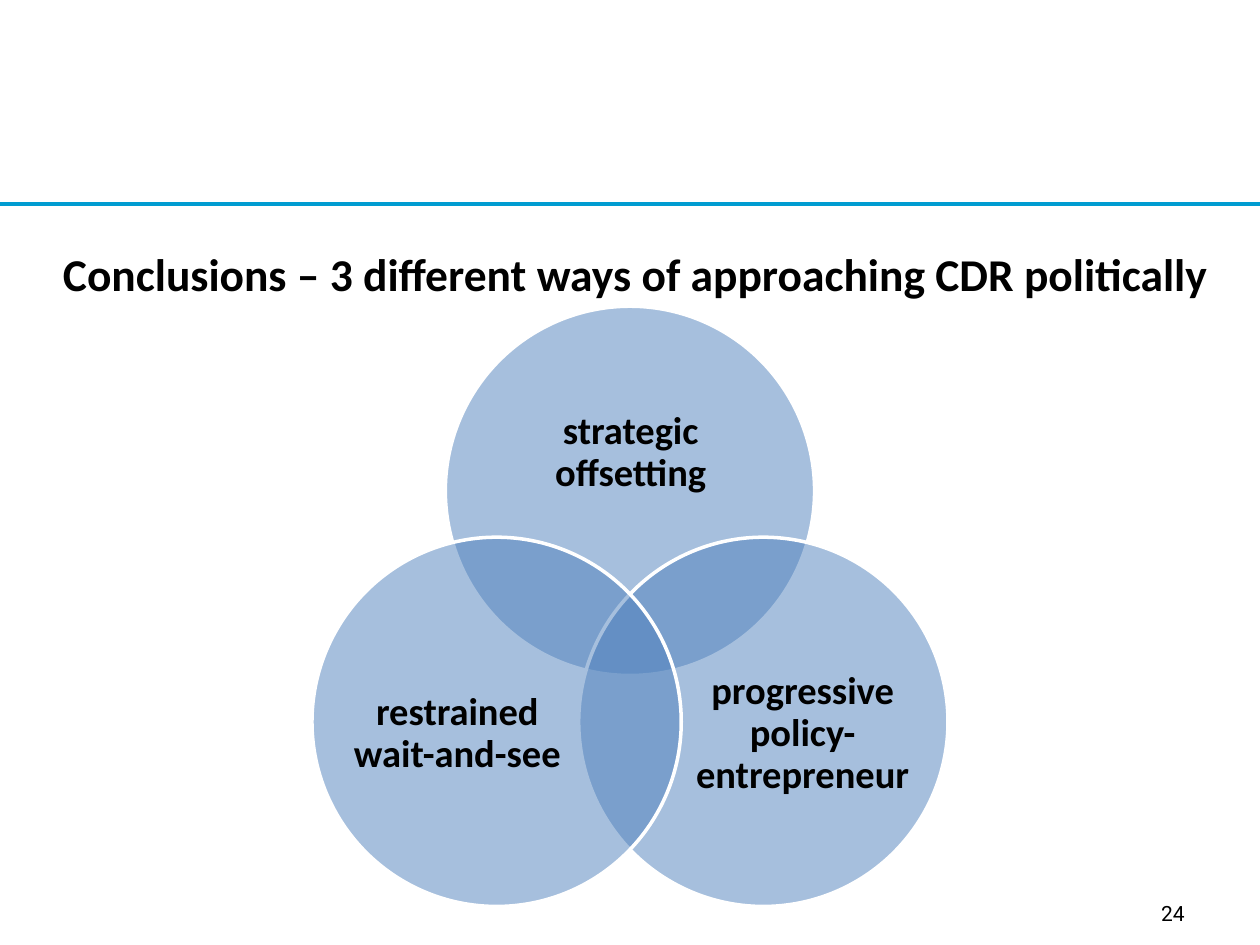
from math import cos, radians, sin

from lxml import etree
from pptx import Presentation
from pptx.dml.color import RGBColor
from pptx.enum.shapes import MSO_CONNECTOR, MSO_SHAPE
from pptx.enum.text import MSO_ANCHOR, PP_ALIGN
from pptx.oxml.ns import qn
from pptx.util import Pt

LEFT, MID, RIGHT = PP_ALIGN.LEFT, PP_ALIGN.CENTER, PP_ALIGN.RIGHT
TOP, CENTER = MSO_ANCHOR.TOP, MSO_ANCHOR.MIDDLE
OVAL, LINE = MSO_SHAPE.OVAL, MSO_CONNECTOR.STRAIGHT

# Content
TITLE = "Conclusions – 3 different ways of approaching CDR politically"
PAGE = "24"
# label, angle of the circle, label box (left, top, width, height)
WAYS = [
    ("strategic offsetting", -90, (283, 211.5, 154.8, 95)),
    ("progressive policy-entrepreneur", 30, (395.3, 361.5, 126.7, 116)),
    ("restrained wait-and-see", 150, (198, 361.5, 126.7, 116)),
]

# Layout in points
WIDTH, HEIGHT = 720, 540
RULE_Y = 116.6
HUB_X, HUB_Y, REACH = 360, 368.5, 88
SIZE = 211


def color(text):
    return RGBColor.from_string(text)


def add_text(slide, text, box, size=22, font="Calibri", bold=True,
             align=MID, anchor=CENTER, space=0.9, inset=(0, 0, 0, 0)):
    frame = slide.shapes.add_textbox(*map(Pt, box)).text_frame
    frame.word_wrap = True
    frame.vertical_anchor = anchor
    (frame.margin_left, frame.margin_top,
     frame.margin_right, frame.margin_bottom) = map(Pt, inset)
    para = frame.paragraphs[0]
    para.alignment = align
    para.line_spacing = space
    run = para.add_run()
    run.text = text
    run.font.size = Pt(size)
    run.font.name = font
    run.font.bold = bold
    run.font.color.rgb = color("000000")


def add_rule(slide):
    rule = slide.shapes.add_connector(LINE, 0, Pt(RULE_Y), Pt(WIDTH), Pt(RULE_Y))
    rule.line.color.rgb = color("009CD1")
    rule.line.width = Pt(2)
    etree.SubElement(rule._element.spPr, qn("a:effectLst"))


def add_disc(slide, angle):
    turn = radians(angle)
    left = HUB_X + REACH * cos(turn) - SIZE / 2
    top = HUB_Y + REACH * sin(turn) - SIZE / 2
    disc = slide.shapes.add_shape(OVAL, *map(Pt, (left, top, SIZE, SIZE)))
    disc.shadow.inherit = False
    disc.fill.solid()
    disc.fill.fore_color.rgb = color("4F81BD")
    disc.line.color.rgb = color("FFFFFF")
    disc.line.width = Pt(2)
    # Half transparent fill
    tint = disc._element.spPr.find(qn("a:solidFill")).find(qn("a:srgbClr"))
    etree.SubElement(tint, qn("a:alpha"), val="50000")


def main():
    deck = Presentation()
    deck.slide_width, deck.slide_height = Pt(WIDTH), Pt(HEIGHT)
    slide = deck.slides.add_slide(deck.slide_layouts[6])

    # Header rule, title and page number
    add_rule(slide)
    add_text(slide, TITLE, (36, 139.7, 684, 61), size=26, align=LEFT,
             anchor=TOP, space=Pt(32), inset=(0, 0, 7.2, 3.6))
    add_text(slide, PAGE, (574.5, 507.5, 109.5, 29), size=12, font="Roboto",
             bold=False, align=RIGHT, space=1, inset=(7.2, 3.6, 7.2, 3.6))

    # Three overlapping circles
    for label, angle, box in WAYS:
        add_disc(slide, angle)
        add_text(slide, label, box)

    deck.save("out.pptx")


if __name__ == "__main__":
    main()
